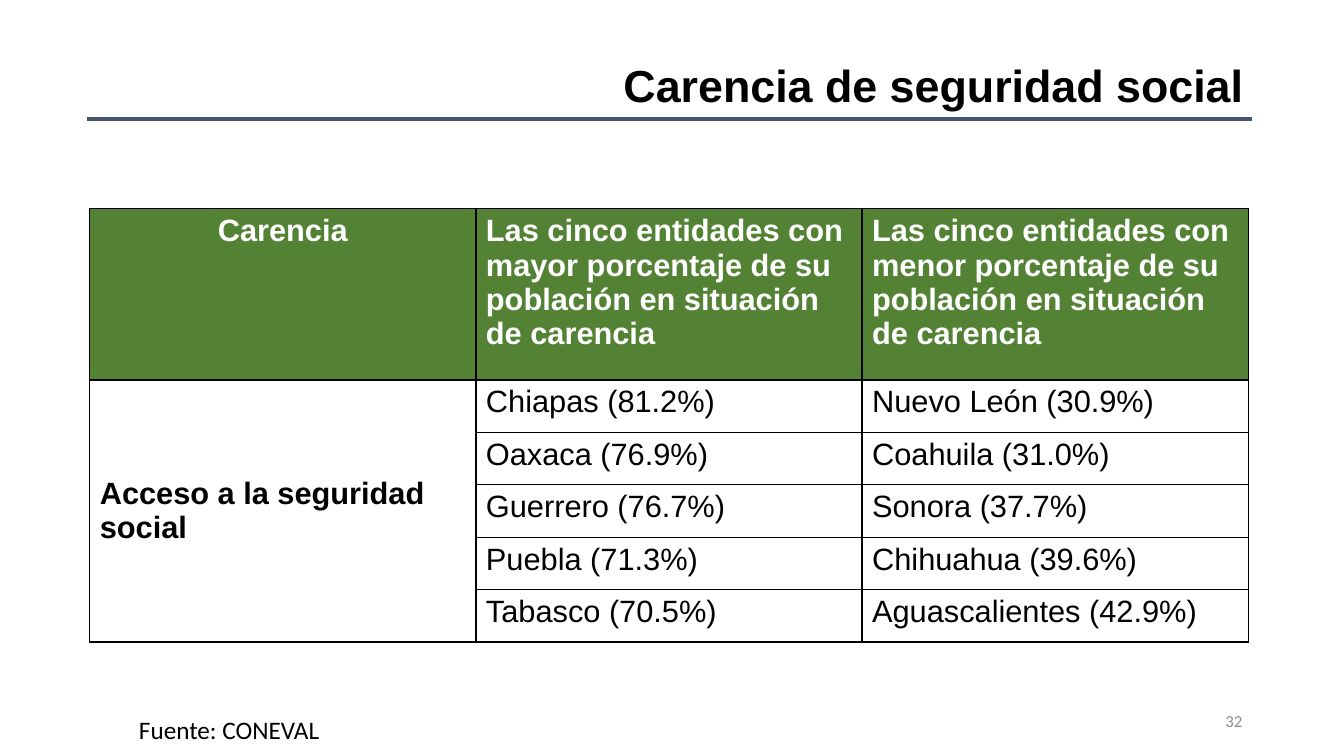
from dataclasses import dataclass

from lxml import etree
from pptx import Presentation
from pptx.dml.color import RGBColor
from pptx.enum import shapes, text
from pptx.oxml import ns
from pptx.util import Inches, Pt

COLORS = {
    "black": "000000",
    "white": "FFFFFF",
    "header": "548235",
    "rule": "44546A",
    "number": "8C8C8C",
}
LEFT, CENTER, RIGHT = text.PP_ALIGN.LEFT, text.PP_ALIGN.CENTER, text.PP_ALIGN.RIGHT
TOP, MIDDLE = text.MSO_ANCHOR.TOP, text.MSO_ANCHOR.MIDDLE


@dataclass
class Style:
    size: float
    font: str = "Arial"
    color: str = "black"
    bold: bool = False
    align: text.PP_ALIGN = LEFT
    anchor: text.MSO_ANCHOR = TOP
    spacing: float = 1.0


@dataclass
class Label:
    words: str
    left: float
    top: float
    width: float
    height: float
    style: Style
    wrap: bool = True


LABELS = [
    Label("32", 9.42, 6.95, 3, 0.4,
          Style(12, "Calibri", "number", align=RIGHT, anchor=MIDDLE)),
    Label("Carencia de seguridad social", 0.94, 0.15, 11.5, 1.45,
          Style(32, bold=True, align=RIGHT, anchor=MIDDLE, spacing=0.9)),
    Label("Fuente: CONEVAL", 1.28, 7.04, 2.01, 0.4, Style(18, "Calibri"), wrap=False),
]

HEADERS = [
    "Carencia",
    "Las cinco entidades con mayor porcentaje de su población en situación de carencia",
    "Las cinco entidades con menor porcentaje de su población en situación de carencia",
]
TOPIC = "Acceso a la seguridad social"
STATES = [
    ("Chiapas (81.2%)", "Nuevo León (30.9%)"),
    ("Oaxaca (76.9%)", "Coahuila (31.0%)"),
    ("Guerrero (76.7%)", "Sonora (37.7%)"),
    ("Puebla (71.3%)", "Chihuahua (39.6%)"),
    ("Tabasco (70.5%)", "Aguascalientes (42.9%)"),
]
COL_WIDTH, HEADER_HEIGHT, ROW_HEIGHT = 3.83, 1.7, 0.52


def rgb(name: str) -> RGBColor:
    return RGBColor.from_string(COLORS[name])


def write(tf, words: str, style: Style) -> None:
    p = tf.paragraphs[0]
    p.alignment = style.align
    p.line_spacing = style.spacing
    r = p.add_run()
    r.text = words
    r.font.name = style.font
    r.font.size = Pt(style.size)
    r.font.bold = style.bold
    r.font.color.rgb = rgb(style.color)


def add_label(slide, label: Label) -> None:
    sp = slide.shapes.add_textbox(Inches(label.left), Inches(label.top),
                                  Inches(label.width), Inches(label.height))
    tf = sp.text_frame
    tf.word_wrap = label.wrap
    tf.vertical_anchor = label.style.anchor
    write(tf, label.words, label.style)


def add_borders(cell) -> None:
    tc_pr = cell._tc.get_or_add_tcPr()
    for i, side in enumerate(("lnL", "lnR", "lnT", "lnB")):
        ln = etree.Element(ns.qn(f"a:{side}"), w=str(Pt(1)))
        fill = etree.SubElement(ln, ns.qn("a:solidFill"))
        etree.SubElement(fill, ns.qn("a:srgbClr"), val=COLORS["black"])
        tc_pr.insert(i, ln)


def fill_cell(cell, words: str, style: Style, fill: str = "") -> None:
    cell.vertical_anchor = style.anchor
    write(cell.text_frame, words, style)
    if fill:
        cell.fill.solid()
        cell.fill.fore_color.rgb = rgb(fill)


def add_states_table(slide) -> None:
    n_rows, n_cols = len(STATES) + 1, len(HEADERS)
    height = HEADER_HEIGHT + ROW_HEIGHT * len(STATES)
    table = slide.shapes.add_table(n_rows, n_cols, Inches(0.89), Inches(2.07),
                                   Inches(COL_WIDTH * n_cols), Inches(height)).table
    for col in table.columns:
        col.width = Inches(COL_WIDTH)
    for i, row in enumerate(table.rows):
        row.height = Inches(ROW_HEIGHT if i else HEADER_HEIGHT)
    for cell in table.iter_cells():
        cell.fill.background()
        add_borders(cell)

    # Header row
    for i, words in enumerate(HEADERS):
        style = Style(22, color="white", bold=True, align=LEFT if i else CENTER)
        fill_cell(table.cell(0, i), words, style, "header")

    # Topic beside the state pairs
    table.cell(1, 0).merge(table.cell(n_rows - 1, 0))
    fill_cell(table.cell(1, 0), TOPIC, Style(22, bold=True, anchor=MIDDLE))
    for i, pair in enumerate(STATES, 1):
        for j, words in enumerate(pair, 1):
            fill_cell(table.cell(i, j), words, Style(22))


def add_rule(slide) -> None:
    line = slide.shapes.add_connector(shapes.MSO_CONNECTOR.STRAIGHT, Inches(0.86),
                                      Inches(1.18), Inches(12.42), Inches(1.18))
    line.line.color.rgb = rgb("rule")
    line.line.width = Pt(3)
    etree.SubElement(line._element.spPr, ns.qn("a:effectLst"))


def main() -> None:
    prs = Presentation()
    prs.slide_width, prs.slide_height = Inches(13.33), Inches(7.5)
    slide = prs.slides.add_slide(prs.slide_layouts[6])
    add_rule(slide)
    add_states_table(slide)
    for label in LABELS:
        add_label(slide, label)
    prs.save("out.pptx")


if __name__ == "__main__":
    main()
